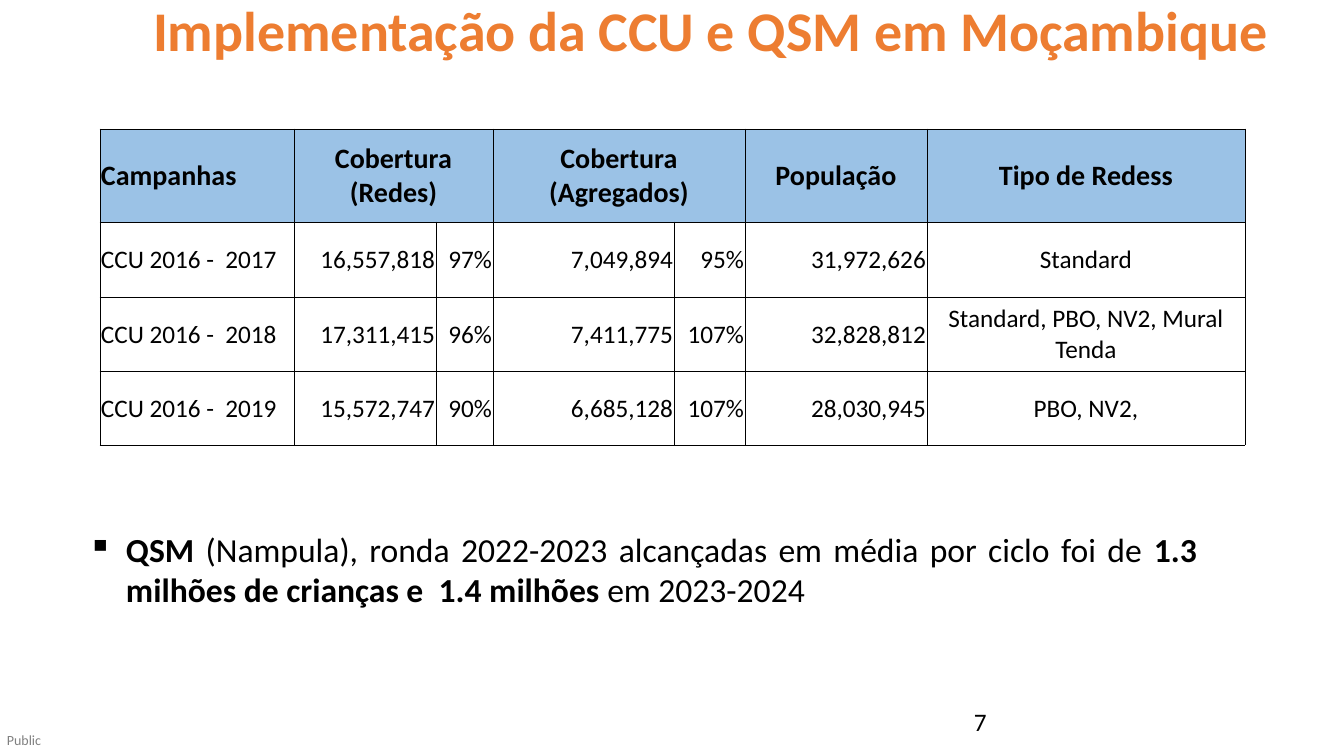
import pptx
import pptx.util
import pptx.dml.color
import pptx.enum.text
import pptx.oxml
import pptx.oxml.ns
from dataclasses import dataclass

TITLE = "Implementação da CCU e QSM em Moçambique"
HEADS = {0: "Campanhas", 1: "Cobertura (Redes)", 3: "Cobertura (Agregados)",
         5: "População", 6: "Tipo de Redess"}
SPANS = [(1, 2), (3, 4)]
ROWS = [
    ("CCU 2016 -  2017", "16,557,818", "97%", "7,049,894", "95%", "31,972,626", "Standard"),
    ("CCU 2016 -  2018", "17,311,415", "96%", "7,411,775", "107%", "32,828,812",
     "Standard, PBO, NV2, Mural Tenda"),
    ("CCU 2016 -  2019", "15,572,747", "90%", "6,685,128", "107%", "28,030,945", "PBO, NV2,"),
]
NOTE = [("QSM", True),
        (" (Nampula), ronda 2022-2023 alcançadas em média por ciclo foi de ", False),
        ("1.3 milhões de crianças e  1.4 milhões ", True),
        ("em 2023-2024", False)]
PAGE = "7"
LABEL = "Public"

SIZE = (1344, 756)
TITLE_BOX = (143, 0, 1190, 66)
TABLE_AT = (100, 129)
COLS = [194, 142, 57, 181, 71, 182, 318]
LINES = [93, 75, 74, 74]
NOTE_BOX = (78, 524, 1129, 98)
PAGE_BOX = (964, 701, 313, 40)
LABEL_BOX = (7, 732, 37, 17)
HANG = 38


@dataclass(frozen=True)
class Theme:
    font: str = "Calibri"
    ink: str = "000000"
    accent: str = "ED7D31"
    head: str = "9BC2E6"
    paper: str = "FFFFFF"
    muted: str = "808080"
    title: int = 40
    note: int = 24
    top: int = 20
    text: int = 18
    small: int = 10


THEME = Theme()
ALIGN = pptx.enum.text.PP_ALIGN
MIDDLE = pptx.enum.text.MSO_ANCHOR.MIDDLE


def px(n):
    return pptx.util.Emu(round(n * 914400 / 100.8))


def rgb(code):
    return pptx.dml.color.RGBColor.from_string(code)


def style(run, size, color=THEME.ink, bold=False):
    run.font.name = THEME.font
    run.font.size = pptx.util.Pt(size)
    run.font.bold = bold
    run.font.color.rgb = rgb(color)


def add_text(slide, box, parts, size, color=THEME.ink, inset=(10, 5)):
    frame = slide.shapes.add_textbox(*map(px, box)).text_frame
    frame.word_wrap = True
    frame.margin_left = frame.margin_right = px(inset[0])
    frame.margin_top = frame.margin_bottom = px(inset[1])
    para = frame.paragraphs[0]
    for text, bold in parts:
        run = para.add_run()
        run.text = text
        style(run, size, color, bold)
    return para


def add_title(slide):
    title = slide.shapes.title
    title.left, title.top, title.width, title.height = map(px, TITLE_BOX)
    frame = title.text_frame
    frame.text = TITLE
    frame.auto_size = pptx.enum.text.MSO_AUTO_SIZE.NONE
    frame.vertical_anchor = MIDDLE
    para = frame.paragraphs[0]
    para.alignment = ALIGN.LEFT
    para.line_spacing = 0.9
    style(para.runs[0], THEME.title, THEME.accent, True)


def set_cell(cell, text, align, head):
    cell.margin_left = cell.margin_right = cell.margin_top = px(1)
    cell.margin_bottom = 0
    cell.vertical_anchor = MIDDLE
    props = cell._tc.get_or_add_tcPr()
    for side in "LRTB":
        props.append(pptx.oxml.parse_xml(
            f'<a:ln{side} {pptx.oxml.ns.nsdecls("a")} w="6350"><a:solidFill>'
            f'<a:srgbClr val="{THEME.ink}"/></a:solidFill></a:ln{side}>'))
    cell.fill.solid()
    cell.fill.fore_color.rgb = rgb(THEME.head if head else THEME.paper)
    if text:
        cell.text_frame.text = text
        para = cell.text_frame.paragraphs[0]
        para.alignment = align
        style(para.runs[0], THEME.top if head else THEME.text, bold=head)


def add_table(slide):
    table = slide.shapes.add_table(
        len(LINES), len(COLS), *map(px, (*TABLE_AT, sum(COLS), sum(LINES)))).table
    for col, width in zip(table.columns, COLS):
        col.width = px(width)
    for row, height in zip(table.rows, LINES):
        row.height = px(height)
    heads = [HEADS.get(c, "") for c in range(len(COLS))]
    last = len(COLS) - 1
    for r, row in enumerate([heads, *ROWS]):
        for c, text in enumerate(row):
            if c == 0:
                align = ALIGN.LEFT
            else:
                align = ALIGN.CENTER if r == 0 or c == last else ALIGN.RIGHT
            set_cell(table.cell(r, c), text, align, r == 0)
    for first, end in SPANS:
        table.cell(0, first).merge(table.cell(0, end))


def add_note(slide):
    para = add_text(slide, NOTE_BOX, NOTE, THEME.note)
    para.alignment = ALIGN.JUSTIFY
    props = para._p.get_or_add_pPr()
    props.set("marL", str(px(HANG)))
    props.set("indent", str(-px(HANG)))
    props.append(pptx.oxml.parse_xml(
        f'<a:buChar {pptx.oxml.ns.nsdecls("a")} char="▪"/>'))


def main():
    deck = pptx.Presentation()
    deck.slide_width, deck.slide_height = map(px, SIZE)
    slide = deck.slides.add_slide(deck.slide_layouts[5])
    add_title(slide)
    add_table(slide)
    add_note(slide)
    add_text(slide, PAGE_BOX, [(PAGE, False)], THEME.text)
    label = add_text(slide, LABEL_BOX, [(LABEL, False)], THEME.small, THEME.muted, (0, 0))
    label.alignment = ALIGN.LEFT
    deck.save("out.pptx")


if __name__ == "__main__":
    main()
